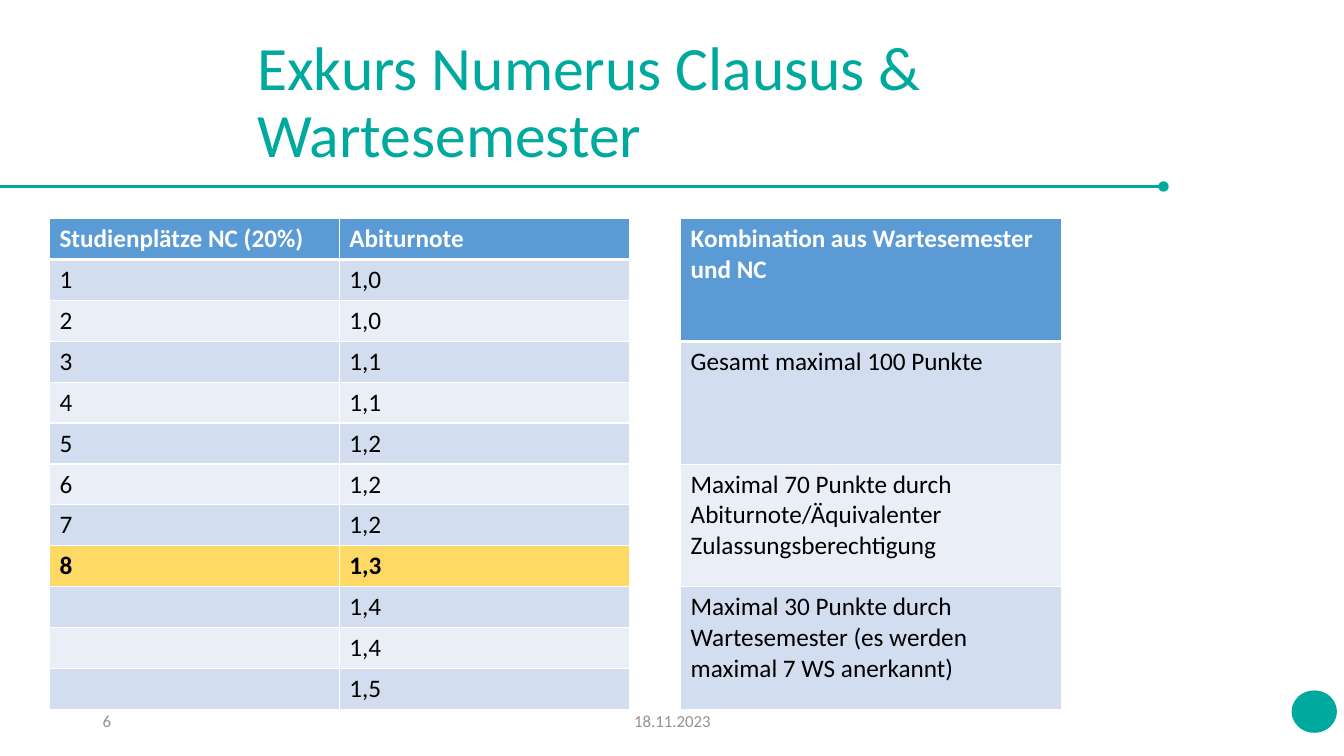
"""Builds the slide on numerus clausus and waiting semesters."""
import dataclasses
import typing

import lxml.etree
import pptx
import pptx.dml.color
import pptx.enum.shapes
import pptx.enum.text
import pptx.oxml.ns
import pptx.util

RGBColor = pptx.dml.color.RGBColor
TEAL = RGBColor(0x00, 0xA9, 0x9E)
WHITE = RGBColor(0xFF, 0xFF, 0xFF)
BLACK = RGBColor(0x00, 0x00, 0x00)
GREY = RGBColor(0x94, 0x93, 0x87)
HEADER_BLUE = RGBColor(0x5B, 0x9B, 0xD5)
BAND_DARK = RGBColor(0xD2, 0xDE, 0xEF)
BAND_LIGHT = RGBColor(0xEA, 0xEF, 0xF7)
HIGHLIGHT = RGBColor(0xFF, 0xD9, 0x66)

SLIDE_WIDTH = pptx.util.Inches(13.33)
SLIDE_HEIGHT = pptx.util.Inches(7.5)
ALIGN = pptx.enum.text.PP_ALIGN
MIDDLE = pptx.enum.text.MSO_ANCHOR.MIDDLE


@dataclasses.dataclass(frozen=True)
class Area:
    """A rectangle in percent of the slide's width and height."""
    left: float
    top: float
    width: float
    height: float

    def box(self) -> tuple[int, int, int, int]:
        """Return the rectangle as slide lengths."""
        return (share(self.left, SLIDE_WIDTH), share(self.top, SLIDE_HEIGHT),
                share(self.width, SLIDE_WIDTH), share(self.height, SLIDE_HEIGHT))


@dataclasses.dataclass(frozen=True)
class Grid:
    """A banded table with an optional highlighted row."""
    area: Area
    rows: list[tuple[str, ...]]
    highlighted: typing.Optional[int] = None


@dataclasses.dataclass(frozen=True)
class FooterEntry:
    """A small grey text at the foot of the slide."""
    area: Area
    wording: str
    alignment: ALIGN


TITLE_AREA = Area(18.38, 4.13, 75.69, 19.33)
DOT_AREA = Area(96.1, 91.33, 3.38, 5.6)
RULE_TOP, RULE_END = 24.67, 86.57

PLACES = Grid(
    Area(3.68, 28.93, 43.14, 64.93),
    [("Studienplätze NC (20%)", "Abiturnote"),
     ("1", "1,0"), ("2", "1,0"), ("3", "1,1"), ("4", "1,1"), ("5", "1,2"),
     ("6", "1,2"), ("7", "1,2"), ("8", "1,3"), ("", "1,4"), ("", "1,4"), ("", "1,5")],
    highlighted=8)
POINTS = Grid(
    Area(50.64, 28.93, 28.36, 64.93),
    [("Kombination aus Wartesemester und NC",),
     ("Gesamt maximal 100 Punkte",),
     ("Maximal 70 Punkte durch Abiturnote/Äquivalenter Zulassungsberechtigung",),
     ("Maximal 30 Punkte durch Wartesemester (es werden maximal 7 WS anerkannt)",)])
FOOTER = [
    FooterEntry(Area(38.78, 92.67, 22.51, 5.33), "18.11.2023", ALIGN.CENTER),
    FooterEntry(Area(6.9, 92.67, 6.83, 5.33), "6", ALIGN.LEFT)]


def share(percent: float, whole: int) -> int:
    """Return a percentage of a length."""
    return round(whole * percent / 100)


def assign(target: typing.Any, values: dict[str, typing.Any]) -> None:
    """Set each named attribute on the target."""
    for attribute, value in values.items():
        setattr(target, attribute, value)


def write(frame: typing.Any, wording: str, color: RGBColor, size: float,
          bold: bool = False, paragraph_format: typing.Optional[dict] = None) -> None:
    """Put one formatted run into a text frame."""
    paragraph = frame.paragraphs[0]
    assign(paragraph, paragraph_format or {})
    if wording:
        run = paragraph.add_run()
        run.text = wording
        assign(run.font, {"name": "Calibri", "size": pptx.util.Pt(size), "bold": bold})
        run.font.color.rgb = color


def add_element(parent: typing.Any, tag: str, **attributes: str) -> typing.Any:
    """Append a drawing element to a parent."""
    return lxml.etree.SubElement(parent, pptx.oxml.ns.qn(tag), attributes)


def border_cell(cell: typing.Any, weights: dict[str, float]) -> None:
    """Draw white borders with the given weights per side."""
    properties = cell._tc.get_or_add_tcPr()
    for side, weight in weights.items():
        border = add_element(properties, f"a:ln{side}", w=str(pptx.util.Pt(weight)))
        add_element(add_element(border, "a:solidFill"), "a:srgbClr", val=str(WHITE))


def add_grid(slide: typing.Any, grid: Grid) -> None:
    """Draw a table with header, bands and highlight."""
    row_count, column_count = len(grid.rows), len(grid.rows[0])
    table = slide.shapes.add_table(row_count, column_count, *grid.area.box()).table
    for row, entries in enumerate(grid.rows):
        is_header, is_highlight = row == 0, row == grid.highlighted
        band = BAND_DARK if row % 2 else BAND_LIGHT
        fill = HEADER_BLUE if is_header else HIGHLIGHT if is_highlight else band
        for column, wording in enumerate(entries):
            cell = table.cell(row, column)
            border_cell(cell, {"L": 1, "R": 1, "T": 3 if row == 1 else 1,
                               "B": 3 if is_header else 1})
            cell.fill.solid()
            cell.fill.fore_color.rgb = fill
            write(cell.text_frame, wording, WHITE if is_header else BLACK, 18,
                  is_header or is_highlight)


def add_title(slide: typing.Any) -> None:
    """Place and fill the title placeholder."""
    title = slide.shapes.title
    assign(title, dict(zip(("left", "top", "width", "height"), TITLE_AREA.box())))
    assign(title.text_frame, {"vertical_anchor": MIDDLE, "word_wrap": True,
                              "auto_size": pptx.enum.text.MSO_AUTO_SIZE.NONE})
    write(title.text_frame, "Exkurs Numerus Clausus & Wartesemester", TEAL, 44,
          paragraph_format={"alignment": ALIGN.LEFT, "line_spacing": 0.9})


def add_rule(slide: typing.Any) -> None:
    """Draw the line under the title with its round end."""
    top = share(RULE_TOP, SLIDE_HEIGHT)
    rule = slide.shapes.add_connector(pptx.enum.shapes.MSO_CONNECTOR.STRAIGHT,
                                      0, top, share(RULE_END, SLIDE_WIDTH), top)
    rule.line.color.rgb = TEAL
    rule.line.width = pptx.util.Pt(2.5)
    add_element(rule.line._get_or_add_ln(), "a:tailEnd", type="oval")
    add_element(rule._element.spPr, "a:effectLst")


def add_corner_dot(slide: typing.Any) -> None:
    """Draw the plain dot in the lower right corner."""
    dot = slide.shapes.add_shape(pptx.enum.shapes.MSO_SHAPE.OVAL, *DOT_AREA.box())
    dot.shadow.inherit = False
    dot.fill.solid()
    dot.fill.fore_color.rgb = TEAL
    dot.line.fill.background()


def add_footer_entry(slide: typing.Any, entry: FooterEntry) -> None:
    """Write one entry of the footer."""
    frame = slide.shapes.add_textbox(*entry.area.box()).text_frame
    assign(frame, {"word_wrap": True, "vertical_anchor": MIDDLE})
    write(frame, entry.wording, GREY, 12, paragraph_format={"alignment": entry.alignment})


def main() -> None:
    """Build and save the presentation."""
    presentation = pptx.Presentation()
    assign(presentation, {"slide_width": SLIDE_WIDTH, "slide_height": SLIDE_HEIGHT})
    slide = presentation.slides.add_slide(presentation.slide_layouts.get_by_name("Title Only"))
    add_rule(slide)
    add_corner_dot(slide)
    add_title(slide)
    add_grid(slide, PLACES)
    for entry in FOOTER:
        add_footer_entry(slide, entry)
    add_grid(slide, POINTS)
    presentation.save("out.pptx")


if __name__ == "__main__":
    main()
